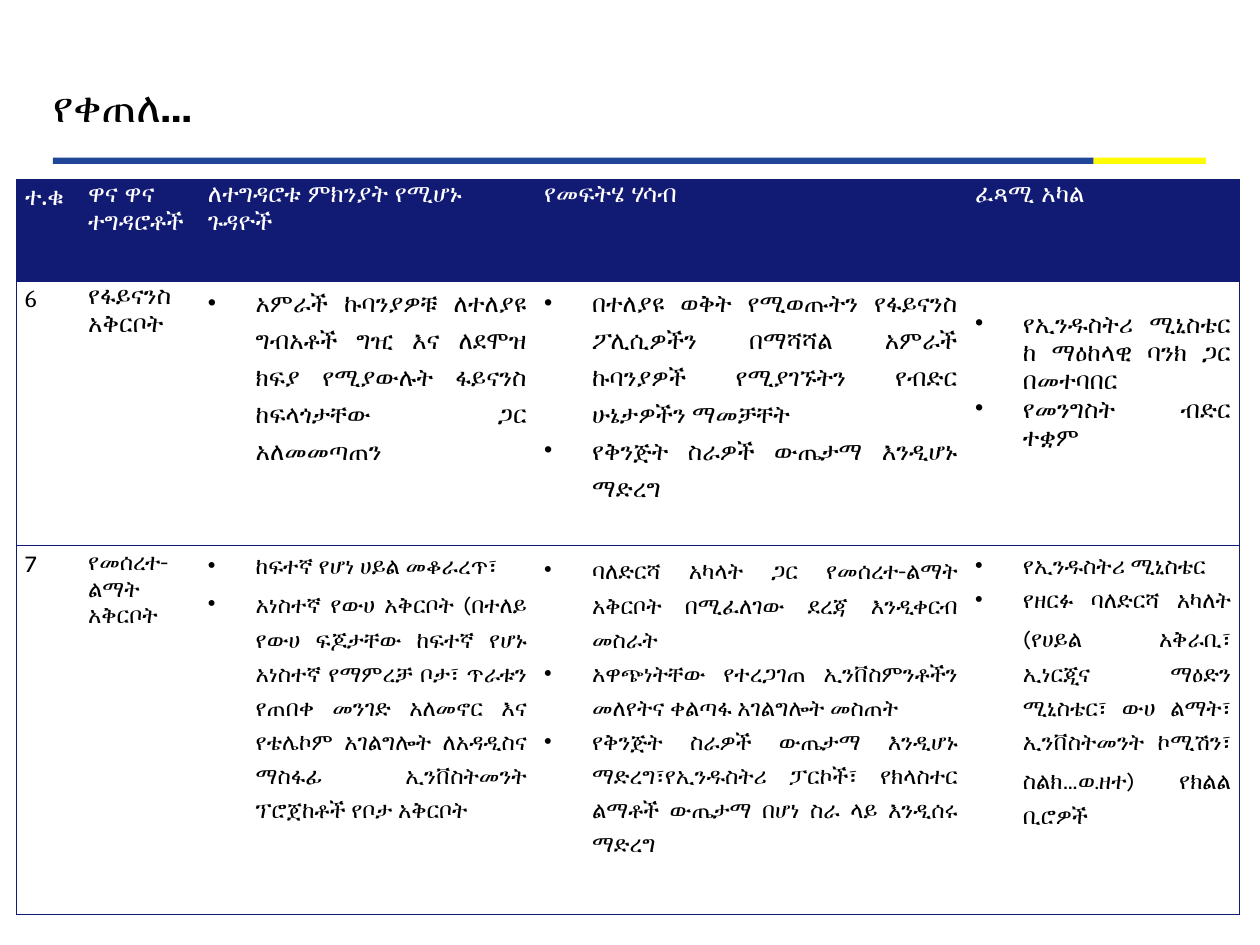
from lxml import etree
from pptx import Presentation
from pptx.dml.color import RGBColor
from pptx.enum.shapes import MSO_SHAPE
from pptx.enum.text import MSO_ANCHOR, PP_ALIGN
from pptx.oxml.ns import qn
from pptx.util import Inches, Pt

RECTANGLE = MSO_SHAPE.RECTANGLE
MIDDLE = MSO_ANCHOR.MIDDLE
LEFT, JUSTIFY = PP_ALIGN.LEFT, PP_ALIGN.JUSTIFY

COLORS = {
    "navy": "121B74",
    "blue": "204697",
    "yellow": "FFFB00",
    "white": "FFFFFF",
    "black": "000000",
}
COLUMN_WIDTHS = [0.5, 0.95, 2.67, 3.42, 2.17]
ROW_HEIGHTS = [0.81, 2.02, 1.34]
BULLET_INDENT = 0.38
FIRST_BULLET_COLUMN = 2

HEADERS = ["ተ.ቁ", "ዋና ዋና ተግዳሮቶች", "ለተግዳሮቱ ምክንያት የሚሆኑ ጉዳዮች", "የመፍትሄ ሃሳብ", "ፈጻሚ አካል"]
FINANCE = [
    ["6"],
    ["የፋይናንስ አቅርቦት"],
    ["አምራች ኩባንያዎቹ ለተለያዩ ግብአቶች ግዢ እና ለደሞዝ ክፍያ የሚያውሉት ፋይናንስ ከፍላጎታቸው ጋር አለመመጣጠን"],
    [
        "በተለያዩ ወቅት የሚወጡትን የፋይናንስ ፖሊሲዎችን በማሻሻል አምራች ኩባንያዎች የሚያገኙትን የብድር ሁኔታዎችን ማመቻቸት",
        "የቅንጅት ስራዎች ውጤታማ እንዲሆኑ ማድረግ",
    ],
    ["የኢንዱስትሪ ሚኒስቴር ከ ማዕከላዊ ባንክ ጋር በመተባበር", "የመንግስት ብድር ተቋም"],
]
INFRASTRUCTURE = [
    ["7"],
    ["የመሰረተ-ልማት አቅርቦት"],
    [
        "ከፍተኛ የሆነ ሀይል መቆራረጥ፣",
        "አነስተኛ የውሀ አቅርቦት (በተለይ የውሀ ፍጆታቸው ከፍተኛ የሆኑ አነስተኛ የማምረቻ ቦታ፣ ጥራቱን የጠበቀ መንገድ አለመኖር እና "
        "የቴሌኮም አገልግሎት ለአዳዲስና ማስፋፊ ኢንቨስትመንት ፕሮጀከቶች የቦታ አቅርቦት",
    ],
    [
        "ባለድርሻ አካላት ጋር የመሰረተ-ልማት አቅርቦት በሚፈለገው ደረጃ እንዲቀርብ መስራት",
        "አዋጭነትቸው የተረጋገጠ ኢንቨስምንቶችን መለየትና ቀልጣፋ አገልግሎት መስጠት",
        "የቅንጅት ስራዎች ውጤታማ እንዲሆኑ ማድረግ፣የኢንዱስትሪ ፓርኮች፣ የክላስተር ልማቶች ውጤታማ በሆነ ስራ ላይ እንዲሰሩ ማድረግ",
    ],
    [
        "የኢንዱስትሪ ሚኒስቴር",
        "የዘርፉ ባለድርሻ አካለት (የሀይል አቅራቢ፣ ኢነርጂና ማዕድን ሚኒስቴር፣ ውሀ ልማት፣ ኢንቨስትመንት ኮሚሽን፣ "
        "ስልክ…ወ.ዘተ) የክልል ቢሮዎች",
    ],
]


def color(name):
    return RGBColor.from_string(COLORS[name])


def add_bullet(para):
    properties = para._p.get_or_add_pPr()
    properties.set("marL", str(Inches(BULLET_INDENT)))
    properties.set("indent", str(-Inches(BULLET_INDENT)))
    etree.SubElement(properties, qn("a:buChar")).set("char", "•")


def write(frame, paragraphs, *, font="Cambria", size=14, ink="black", bold=False,
          align=LEFT, spacing=1.15, bullets=False):
    """Fill a text frame with paragraphs that share one format."""
    frame.word_wrap = True
    for index, text in enumerate(paragraphs):
        para = frame.add_paragraph() if index else frame.paragraphs[0]
        if bullets:
            add_bullet(para)
        para.alignment = align
        para.line_spacing = spacing
        span = para.add_run()
        span.text = text
        span.font.name = font
        span.font.size = Pt(size)
        span.font.bold = bold
        span.font.color.rgb = color(ink)


def add_title(page, text):
    box = page.shapes.add_textbox(Inches(0.42), Inches(0.5), Inches(8.33), Inches(0.73))
    frame = box.text_frame
    frame.margin_left = frame.margin_right = frame.margin_top = frame.margin_bottom = 0
    frame.vertical_anchor = MIDDLE
    write(frame, [text], font="Karla", size=24, bold=True, spacing=0.9)


def add_bar(page, left, width, fill):
    bar = page.shapes.add_shape(RECTANGLE, Inches(left), Inches(1.25), Inches(width), Inches(0.05))
    bar.shadow.inherit = False
    bar.fill.solid()
    bar.fill.fore_color.rgb = color(fill)
    bar.line.fill.background()


def set_borders(cell, sides):
    """Rule the given sides (of L, R, T, B) and clear the others."""
    properties = cell._tc.get_or_add_tcPr()
    for side in "LRTB":
        line = etree.SubElement(properties, qn(f"a:ln{side}"), w=str(Pt(0.5)))
        if side in sides:
            fill = etree.SubElement(line, qn("a:solidFill"))
            etree.SubElement(fill, qn("a:srgbClr"), val=COLORS["navy"])
        else:
            etree.SubElement(line, qn("a:noFill"))


def format_cell(cell, row, column):
    cell.margin_left = cell.margin_right = Inches(0.07)
    cell.margin_top = cell.margin_bottom = 0
    sides = "TB"
    if column == 0:
        sides += "L"
    if column == len(COLUMN_WIDTHS) - 1:
        sides += "R"
    set_borders(cell, sides)
    if row == 0:
        cell.fill.solid()
        cell.fill.fore_color.rgb = color("navy")
    else:
        cell.fill.background()


def add_challenge_table(page):
    table = page.shapes.add_table(
        len(ROW_HEIGHTS), len(COLUMN_WIDTHS), Inches(0.13), Inches(1.42),
        Inches(sum(COLUMN_WIDTHS)), Inches(sum(ROW_HEIGHTS))).table
    table.first_row = table.horz_banding = False
    for column, width in zip(table.columns, COLUMN_WIDTHS):
        column.width = Inches(width)
    for row, height in zip(table.rows, ROW_HEIGHTS):
        row.height = Inches(height)

    for column, header in enumerate(HEADERS):
        cell = table.cell(0, column)
        format_cell(cell, 0, column)
        write(cell.text_frame, [header], ink="white", bold=True)

    for row, (contents, font) in enumerate([(FINANCE, "Cambria"), (INFRASTRUCTURE, "Karla")], 1):
        for column, paragraphs in enumerate(contents):
            cell = table.cell(row, column)
            format_cell(cell, row, column)
            bullets = column >= FIRST_BULLET_COLUMN
            write(cell.text_frame, paragraphs, font=font, align=JUSTIFY, bullets=bullets,
                  size=13 if font == "Karla" and column else 14,
                  spacing=1.5 if bullets else 1.15)

    finance_actors = table.cell(1, 4)
    finance_actors.margin_top = Inches(0.23)
    for para in finance_actors.text_frame.paragraphs:
        para.line_spacing = 1.15


def main():
    deck = Presentation()
    deck.slide_width, deck.slide_height = Inches(10), Inches(7.5)
    page = deck.slides.add_slide(deck.slide_layouts[6])
    add_bar(page, 0.42, 8.26, "blue")
    add_bar(page, 8.68, 0.89, "yellow")
    add_title(page, "የቀጠለ…")
    add_challenge_table(page)
    deck.save("out.pptx")


if __name__ == "__main__":
    main()
